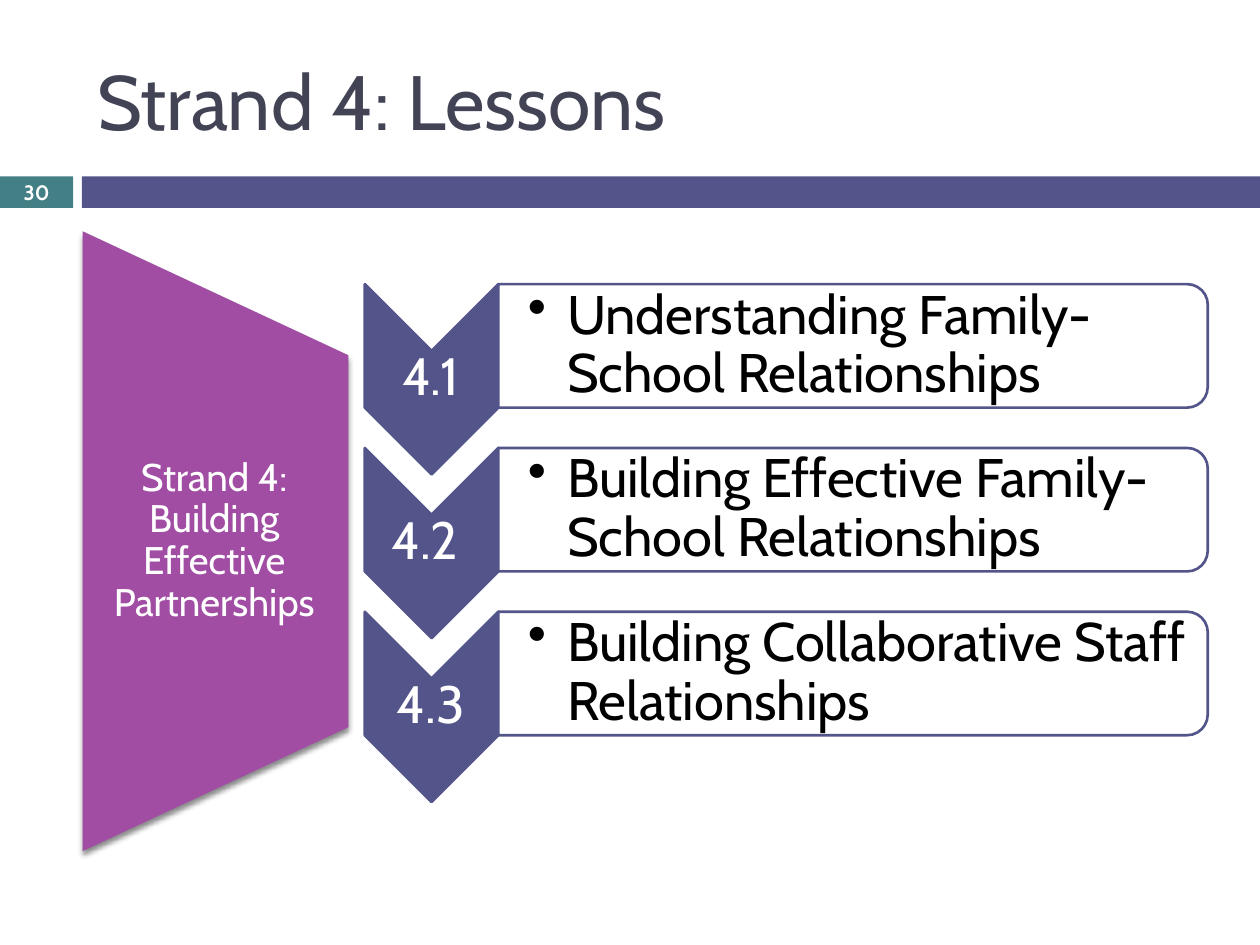
"""Build the Strand 4 lessons slide."""
from lxml.etree import SubElement
from pptx import Presentation
from pptx.dml.color import RGBColor
from pptx.enum.shapes import MSO_SHAPE
from pptx.enum.text import MSO_ANCHOR, MSO_AUTO_SIZE, PP_ALIGN
from pptx.oxml.ns import qn
from pptx.util import Inches, Pt

INDIGO, TEAL, PURPLE = "53548A", "438086", "A04DA3"
SLATE, WHITE, BLACK = "424456", "FFFFFF", "000000"
INSETS = (0.1, 0.05, 0.1, 0.05)
TIGHT = (0.02, 0.02, 0.02, 0.02)


def color(value):
    return RGBColor.from_string(value)


class Deck:
    font = "Cabin"
    line_width = 1.5

    def __init__(self, width, height):
        self.prs = Presentation()
        self.prs.slide_width, self.prs.slide_height = Inches(width), Inches(height)
        self.s = self.prs.slides.add_slide(self.prs.slide_layouts[5])

    def fill_text(self, sp, text, size, fill, align, insets=INSETS, bold=False, spacing=1.0):
        tf = sp.text_frame
        tf.word_wrap = True
        tf.auto_size = MSO_AUTO_SIZE.NONE
        tf.vertical_anchor = MSO_ANCHOR.MIDDLE
        tf.margin_left, tf.margin_top, tf.margin_right, tf.margin_bottom = map(Inches, insets)
        p = tf.paragraphs[0]
        p.alignment, p.line_spacing = align, spacing
        r = p.add_run()
        r.text = text
        r.font.name, r.font.size, r.font.bold = self.font, Pt(size), bold
        r.font.color.rgb = color(fill)
        return p

    def title(self, box, text):
        sp = self.s.shapes.title
        sp.left, sp.top, sp.width, sp.height = map(Inches, box)
        self.fill_text(sp, text, 44, SLATE, PP_ALIGN.LEFT)

    def shape(self, kind, box, fill, line=None, rotation=0):
        sp = self.s.shapes.add_shape(kind, *map(Inches, box))
        sp.shadow.inherit = False
        sp.rotation = rotation
        sp.fill.solid()
        sp.fill.fore_color.rgb = color(fill)
        if line:
            sp.line.color.rgb = color(line)
            sp.line.width = Pt(self.line_width)
        else:
            sp.line.fill.background()
        return sp

    def text(self, box, text, size, fill=WHITE, align=PP_ALIGN.CENTER, **style):
        sp = self.s.shapes.add_textbox(*map(Inches, box))
        return self.fill_text(sp, text, size, fill, align, **style)

    def bullet(self, box, text):
        p = self.text(box, text, 31, BLACK, PP_ALIGN.LEFT,
                      insets=(0.24, 0.02, 0.02, 0.02), spacing=0.9)
        pPr = p._p.get_or_add_pPr()
        pPr.set("marL", str(Inches(0.31)))
        pPr.set("indent", str(-Inches(0.31)))
        SubElement(pPr, qn("a:buChar"), char="•")

    def drop_shadow(self, sp):
        effects = sp._element.spPr.find(qn("a:effectLst"))
        shadow = SubElement(effects, qn("a:outerShdw"), blurRad=str(Pt(3)),
                            dist=str(Pt(2.4)), dir="5400000", rotWithShape="0")
        tint = SubElement(shadow, qn("a:srgbClr"), val=BLACK)
        SubElement(tint, qn("a:alpha"), val="45000")

    def lesson(self, top, number, name):
        self.shape(MSO_SHAPE.CHEVRON, (2.67, top + 0.18, 1.51, 1.06), INDIGO, INDIGO, 90)
        self.text((2.89, top + 0.48, 1.06, 0.45), number, 30, insets=TIGHT, spacing=0.9)
        self.shape(MSO_SHAPE.ROUND_2_SAME_RECTANGLE, (6.28, top - 2.37, 0.98, 5.63),
                   WHITE, INDIGO, 90)
        self.bullet((3.95, top, 5.58, 0.89), name)


def main():
    deck = Deck(10, 7.5)
    deck.shape(MSO_SHAPE.RECTANGLE, (0, 1.4, 0.58, 0.25), TEAL)
    deck.shape(MSO_SHAPE.RECTANGLE, (0.65, 1.4, 9.35, 0.25), INDIGO)
    deck.title((0.67, 0.25, 8.92, 1.08), "Strand 4: Lessons")

    strand = deck.shape(MSO_SHAPE.FLOWCHART_MANUAL_OPERATION,
                        (-0.75, 3.24, 4.92, 2.11), PURPLE, rotation=270)
    deck.drop_shadow(strand)
    deck.text((0.65, 2.82, 2.11, 2.95), "Strand 4: Building Effective Partnerships", 22,
              insets=(0.15, 0, 0.16, 0), spacing=0.9)

    lessons = [
        ("4.1", "Understanding Family-School Relationships"),
        ("4.2 ", "Building Effective Family-School Relationships"),
        ("4.3", "Building Collaborative Staff Relationships"),
    ]
    for i, (number, name) in enumerate(lessons):
        deck.lesson(2.3 + 1.3 * i, number, name)

    deck.text((0, 1.39, 0.58, 0.27), "30", 11.9, bold=True)
    deck.prs.save("out.pptx")


if __name__ == "__main__":
    main()
